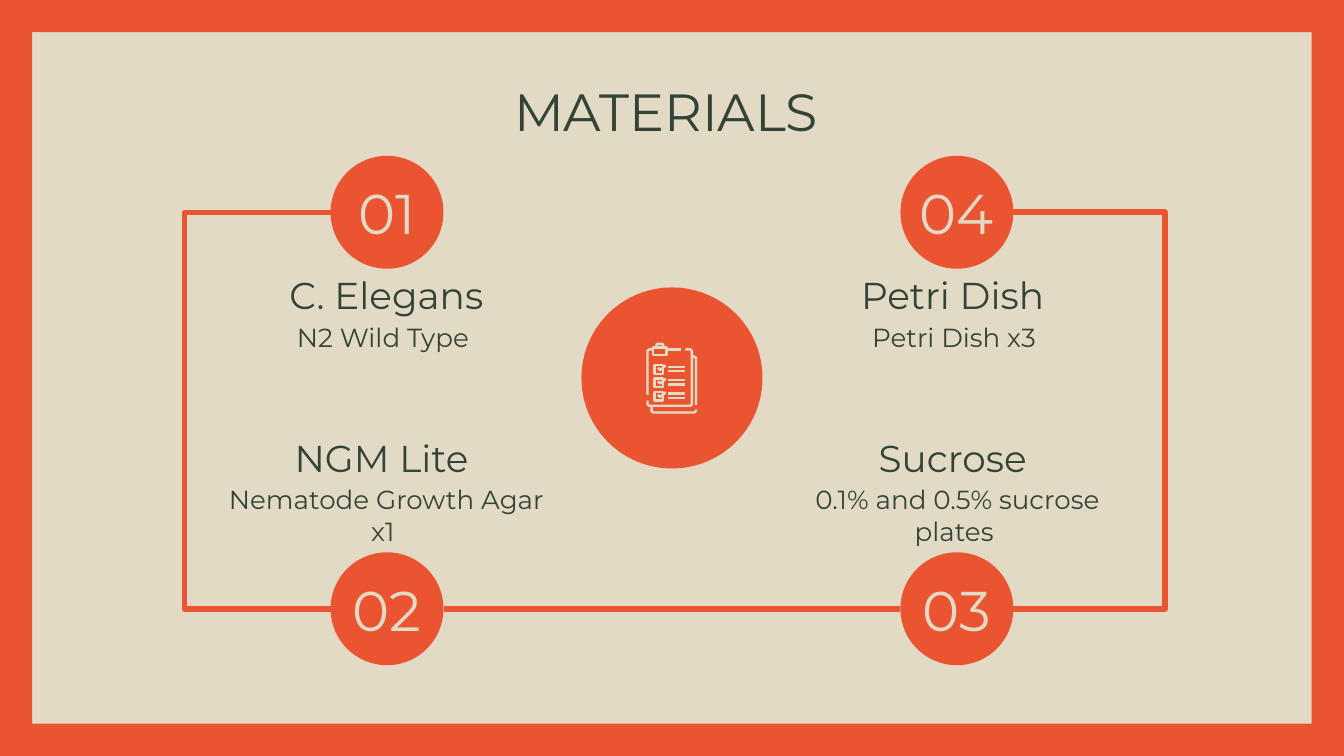
from dataclasses import dataclass

from lxml import etree
from pptx import Presentation
from pptx.dml.color import RGBColor
from pptx.enum import shapes, text
from pptx.oxml import ns
from pptx.util import Pt


@dataclass(frozen=True)
class Theme:
    orange: RGBColor = RGBColor.from_string("EA5430")
    cream: RGBColor = RGBColor.from_string("E3DAC5")
    green: RGBColor = RGBColor.from_string("334436")
    font: str = "Montserrat"
    title: int = 28
    number: int = 30
    heading: int = 20
    body: int = 14


theme = Theme()


def write(shape, words, size, color, anchor, side_inset=7.2, wrap=True):
    frame = shape.text_frame
    frame.auto_size = text.MSO_AUTO_SIZE.NONE
    frame.word_wrap = wrap
    frame.vertical_anchor = anchor
    frame.margin_left = frame.margin_right = Pt(side_inset)
    frame.margin_top = frame.margin_bottom = Pt(7.2)
    paragraph = frame.paragraphs[0]
    paragraph.alignment = text.PP_ALIGN.CENTER
    run = paragraph.add_run()
    run.text = words
    run.font.name = theme.font
    run.font.size = Pt(size)
    run.font.color.rgb = color


def paint(shape, fill=None, line=None, width=1.3):
    """Set fill and line, and remove the shadow."""
    if shape.shape_type == shapes.MSO_SHAPE_TYPE.LINE:
        etree.SubElement(shape._element.spPr, ns.qn("a:effectLst"))
    else:
        shape.shadow.inherit = False
        if fill is None:
            shape.fill.background()
        else:
            shape.fill.solid()
            shape.fill.fore_color.rgb = fill
    if line is None:
        shape.line.fill.background()
    else:
        shape.line.color.rgb = line
        shape.line.width = Pt(width)


presentation = Presentation()
presentation.slide_width, presentation.slide_height = Pt(720), Pt(405)
slide = presentation.slides.add_slide(presentation.slide_layouts[5])
slide.background.fill.solid()
slide.background.fill.fore_color.rgb = theme.cream

# Border and title
border = slide.shapes.add_shape(shapes.MSO_SHAPE.FRAME, 0, 0, Pt(720), Pt(405))
border.adjustments[0] = 17.3 / 405
paint(border, theme.orange)
title = slide.shapes.title
title.left, title.top, title.width, title.height = Pt(56.9), Pt(35.3), Pt(607), Pt(45.4)
write(title, "MATERIALS ", theme.title, theme.green, text.MSO_ANCHOR.TOP)

# Four materials, each with a numbered circle and two lines of text
DIAMETER = 60.5
circle_lefts, circle_tops = (177.1, 482.4), (83.5, 295.9)
materials = [
    ("01", "C. Elegans", "N2 Wild Type ", 0, 0),
    ("04", "Petri Dish ", "Petri Dish x3 ", 1, 0),
    ("02", "NGM Lite ", "Nematode Growth Agar x1 ", 0, 1),
    ("03", "Sucrose ", "0.1% and 0.5% sucrose plates ", 1, 1),
]
for number, heading, body, column, row in materials:
    circle = slide.shapes.add_shape(
        shapes.MSO_SHAPE.OVAL, Pt(circle_lefts[column]), Pt(circle_tops[row]),
        Pt(DIAMETER), Pt(DIAMETER))
    paint(circle, theme.orange)
    write(circle, number, theme.number, theme.cream, text.MSO_ANCHOR.MIDDLE, 0, False)

    left, top = 111.6 + 306 * column, 144 + 87.1 * row
    heading_box = slide.shapes.add_textbox(Pt(left), Pt(top), Pt(190.8), Pt(33.1))
    write(heading_box, heading, theme.heading, theme.green, text.MSO_ANCHOR.BOTTOM)
    body_box = slide.shapes.add_textbox(Pt(left), Pt(top + 20.9), Pt(190.8), Pt(45.4))
    write(body_box, body, theme.body, theme.green, text.MSO_ANCHOR.TOP)

# Path through the circles; the elbows end just inside a circle so they have a width
OVERLAP = 2
upper, lower = (top + DIAMETER / 2 for top in circle_tops)
first_left, second_left = circle_lefts
first_right, second_right = (left + DIAMETER for left in circle_lefts)
elbow, straight = shapes.MSO_CONNECTOR.ELBOW, shapes.MSO_CONNECTOR.STRAIGHT
links = [
    (elbow, first_left, upper, first_left + OVERLAP, lower, 99.4),
    (straight, first_right, lower, second_left, lower, None),
    (elbow, second_right - OVERLAP, lower, second_right, upper, 623.5),
]
for kind, start_x, start_y, end_x, end_y, bend_x in links:
    link = slide.shapes.add_connector(kind, Pt(start_x), Pt(start_y), Pt(end_x), Pt(end_y))
    paint(link, line=theme.orange, width=3)
    if bend_x is not None:
        ratio = (bend_x - start_x) / OVERLAP
        guides = link._element.spPr.find(ns.qn("a:prstGeom")).get_or_add_avLst()
        etree.SubElement(guides, ns.qn("a:gd"), name="adj1", fmla=f"val {round(ratio * 100000)}")

# Central circle with a checklist icon
hub = slide.shapes.add_shape(shapes.MSO_SHAPE.OVAL, Pt(311.5), Pt(154), Pt(97), Pt(97))
paint(hub, theme.orange)

ICON_LEFT, ICON_TOP = 346.3, 183.6
strokes = [
    [(0.6, 28), (0.6, 4.4), (1.4, 3.6), (3.6, 3.6)],
    [(11.5, 3.6), (18.7, 3.6)],
    [(20.9, 3.6), (23.6, 3.6), (24.4, 4.4), (24.4, 33), (23.6, 33.8),
     (1.4, 33.8), (0.6, 33), (0.6, 31)],
    [(25, 7.2), (26.6, 8), (26.6, 33.4)],
    [(2.8, 34.4), (2.8, 36.6), (3.6, 37.4), (25.8, 37.4), (26.6, 36.6), (26.6, 35.8)],
    [(3.7, 2.5), (10.8, 2.5), (10.8, 6.5), (3.7, 6.5), (3.7, 2.5)],
    [(5.4, 2.5), (5.4, 1), (6, 0.6), (8.4, 0.6), (9, 1), (9, 2.5)],
]
for item in range(3):
    y = 12.1 + 7.2 * item
    strokes += [
        [(4.3, y), (9, y), (9, y + 4.6), (4.3, y + 4.6), (4.3, y)],
        [(6.2, y + 1.4), (7.4, y + 2.6), (10.4, y)],
        [(11.8, y + 0.8), (20.9, y + 0.8)],
        [(11.8, y + 3.1), (20.9, y + 3.1)],
    ]

icon = slide.shapes.add_group_shape()
for stroke in strokes:
    points = [(Pt(ICON_LEFT + x), Pt(ICON_TOP + y)) for x, y in stroke]
    if len(points) == 2:
        mark = icon.shapes.add_connector(straight, *points[0], *points[1])
    else:
        builder = icon.shapes.build_freeform(*points[0])
        builder.add_line_segments(points[1:], close=points[0] == points[-1])
        mark = builder.convert_to_shape()
    paint(mark, line=theme.cream)

presentation.save("out.pptx")
